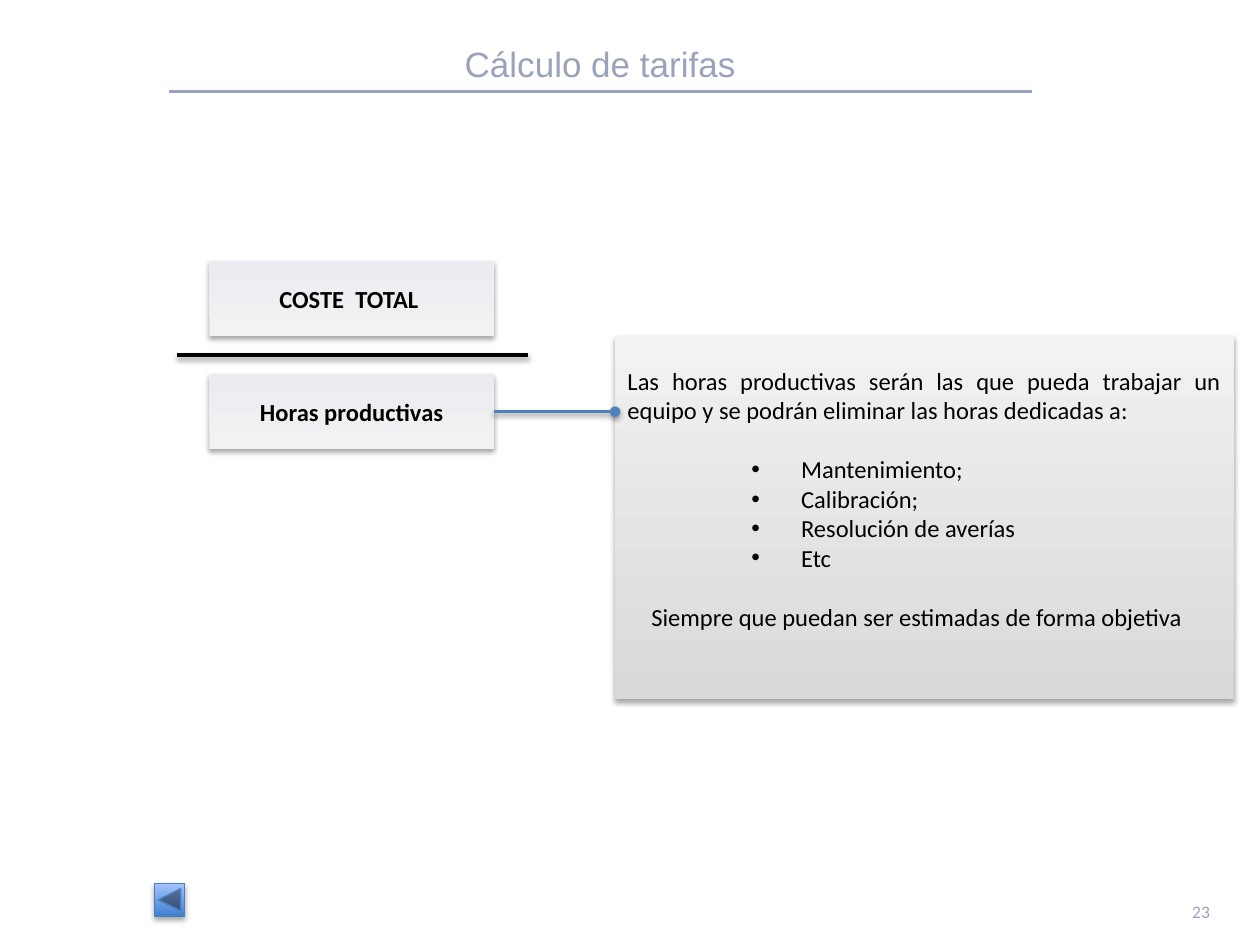
from dataclasses import dataclass

from lxml import etree
from pptx import Presentation
from pptx.dml.color import RGBColor
from pptx.enum.shapes import MSO_CONNECTOR, MSO_SHAPE
from pptx.enum.text import MSO_ANCHOR, PP_ALIGN
from pptx.oxml.ns import qn
from pptx.util import Cm, Pt

RECTANGLE = MSO_SHAPE.RECTANGLE
BACK_BUTTON = MSO_SHAPE.ACTION_BUTTON_BACK_OR_PREVIOUS
STRAIGHT = MSO_CONNECTOR.STRAIGHT
TOP, MIDDLE, BOTTOM = MSO_ANCHOR.TOP, MSO_ANCHOR.MIDDLE, MSO_ANCHOR.BOTTOM
LEFT, CENTER, RIGHT, JUSTIFY = PP_ALIGN.LEFT, PP_ALIGN.CENTER, PP_ALIGN.RIGHT, PP_ALIGN.JUSTIFY
RIGHT_SIDE = 3


@dataclass(frozen=True)
class Theme:
    ink: str = "020301"
    muted: str = "9AA2BC"
    link: str = "4F81BD"
    button_line: str = "4B7EBC"
    button_fill: tuple = ("3F80CE", "A4C4FF")
    term_fill: tuple = ("F2F2F2", "EBECF2")
    panel_fill: tuple = ("D9D9D9", "F2F2F2")
    heading_font: str = "Arial"
    body_font: str = "Calibri"
    title_size: int = 20
    body_size: int = 14
    number_size: int = 10


THEME = Theme()


def add_shadow(effects, blur, distance, opacity):
    shadow = etree.SubElement(
        effects, qn("a:outerShdw"), blurRad=str(Pt(blur)), dist=str(Pt(distance)),
        dir="5400000", rotWithShape="0")
    color = etree.SubElement(shadow, qn("a:srgbClr"), val="000000")
    etree.SubElement(color, qn("a:alpha"), val=str(opacity * 1000))


def add_line(page, start, end, color, width, shadow=True):
    line = page.shapes.add_connector(STRAIGHT, *map(Cm, start + end))
    line.line.color.rgb = RGBColor.from_string(color)
    line.line.width = Pt(width)
    effects = etree.SubElement(line.element.spPr, qn("a:effectLst"))
    if shadow:
        add_shadow(effects, 3.1, 1.6, 38)
    return line


def add_block(page, kind, box, colors, outline=None):
    block = page.shapes.add_shape(kind, *map(Cm, box))
    block.shadow.inherit = False
    block.fill.gradient()
    block.fill.gradient_angle = 90
    for stop, color in zip(block.fill.gradient_stops, colors):
        stop.color.rgb = RGBColor.from_string(color)
    if outline:
        block.line.color.rgb = RGBColor.from_string(outline)
        block.line.width = Pt(0.75)
    else:
        block.line.fill.background()
    add_shadow(block.element.spPr.find(qn("a:effectLst")), 3.1, 1.8, 35)
    return block


def write(para, text, size=THEME.body_size, font=THEME.body_font, color=THEME.ink,
          bold=False, margin=0, hanging=0, bullet=None, **layout):
    if margin:
        properties = para._p.get_or_add_pPr()
        properties.set("marL", str(Cm(margin)))
        properties.set("indent", str(-Cm(hanging)))
        if bullet:
            etree.SubElement(properties, qn("a:buFont"), typeface="Arial")
            etree.SubElement(properties, qn("a:buChar"), char=bullet)
    for name, value in layout.items():
        setattr(para, name, value)
    span = para.add_run()
    span.text = text
    for name, value in {"size": Pt(size), "name": font, "bold": bold}.items():
        setattr(span.font, name, value)
    span.font.color.rgb = RGBColor.from_string(color)


def add_label(page, box, anchor, text, **style):
    label = page.shapes.add_textbox(*map(Cm, box))
    label.text_frame.word_wrap = True
    label.text_frame.vertical_anchor = anchor
    write(label.text_frame.paragraphs[0], text, color=THEME.muted, **style)


def add_header(page, box):
    left, top, width, height = box
    rule = top + height + 0.02
    add_line(page, (left, rule), (left + width, rule), THEME.muted, 1.5, shadow=False)
    add_label(page, box, BOTTOM, "Cálculo de tarifas", size=THEME.title_size,
              font=THEME.heading_font, alignment=CENTER, line_spacing=0.8)


def add_fraction(page, box):
    left, top, width, height = box
    term_width, term_height = 5.74, 1.52
    term_left = left + 0.66
    middle = top + height / 2
    add_line(page, (left, middle), (left + width, middle), THEME.ink, 2)
    for text, term_top in (("COSTE  TOTAL ", top),
                           ("Horas productivas", top + height - term_height)):
        term = add_block(page, RECTANGLE, (term_left, term_top, term_width, term_height),
                         THEME.term_fill)
        term.text_frame.vertical_anchor = MIDDLE
        write(term.text_frame.paragraphs[0], text, bold=True, alignment=CENTER)
    return term


def add_panel(page, box):
    panel = add_block(page, RECTANGLE, box, THEME.panel_fill)
    frame = panel.text_frame
    frame.word_wrap = True
    frame.vertical_anchor = MIDDLE
    frame.margin_bottom = Cm(0.9)
    write(frame.paragraphs[0],
          "Las horas productivas serán las que pueda trabajar un equipo "
          "y se podrán eliminar las horas dedicadas a:", alignment=JUSTIFY)
    gap = Pt(17)
    items = ("Mantenimiento;", "Calibración;", "Resolución de averías", "Etc")
    for index, item in enumerate(items):
        write(frame.add_paragraph(), item, margin=3.5, hanging=1, bullet="•",
              alignment=LEFT, space_before=Pt(0) if index else gap)
    write(frame.add_paragraph(), "Siempre que puedan ser estimadas de forma objetiva",
          margin=0.48, alignment=LEFT, space_before=gap)
    return panel


def add_link(page, term, panel):
    height = (term.top + term.height / 2) / Cm(1)
    start = ((term.left + term.width) / Cm(1), height)
    link = add_line(page, start, (panel.left / Cm(1), height), THEME.link, 2)
    link.begin_connect(term, RIGHT_SIDE)
    etree.SubElement(link.line._get_or_add_ln(), qn("a:tailEnd"), type="oval")


def add_footer(page, box):
    left, top, width, height = box
    number_width = 1.32
    add_block(page, BACK_BUTTON, (left, top, 0.6, 0.66), THEME.button_fill, THEME.button_line)
    add_label(page, (left + width - number_width, top + 0.22, number_width, height - 0.22),
              TOP, "23", size=THEME.number_size, alignment=RIGHT)


def main():
    deck = Presentation()
    deck.slide_width, deck.slide_height = Cm(25.4), Cm(19.05)
    page = deck.slides.add_slide(deck.slide_layouts[6])
    add_header(page, (3.4, 0.76, 17.4, 1.07))
    term = add_fraction(page, (3.56, 5.26, 7.08, 3.8))
    panel = add_panel(page, (12.4, 6.78, 12.47, 7.32))
    add_link(page, term, panel)
    add_footer(page, (3.12, 17.81, 21.52, 0.96))
    deck.save("out.pptx")


if __name__ == "__main__":
    main()
